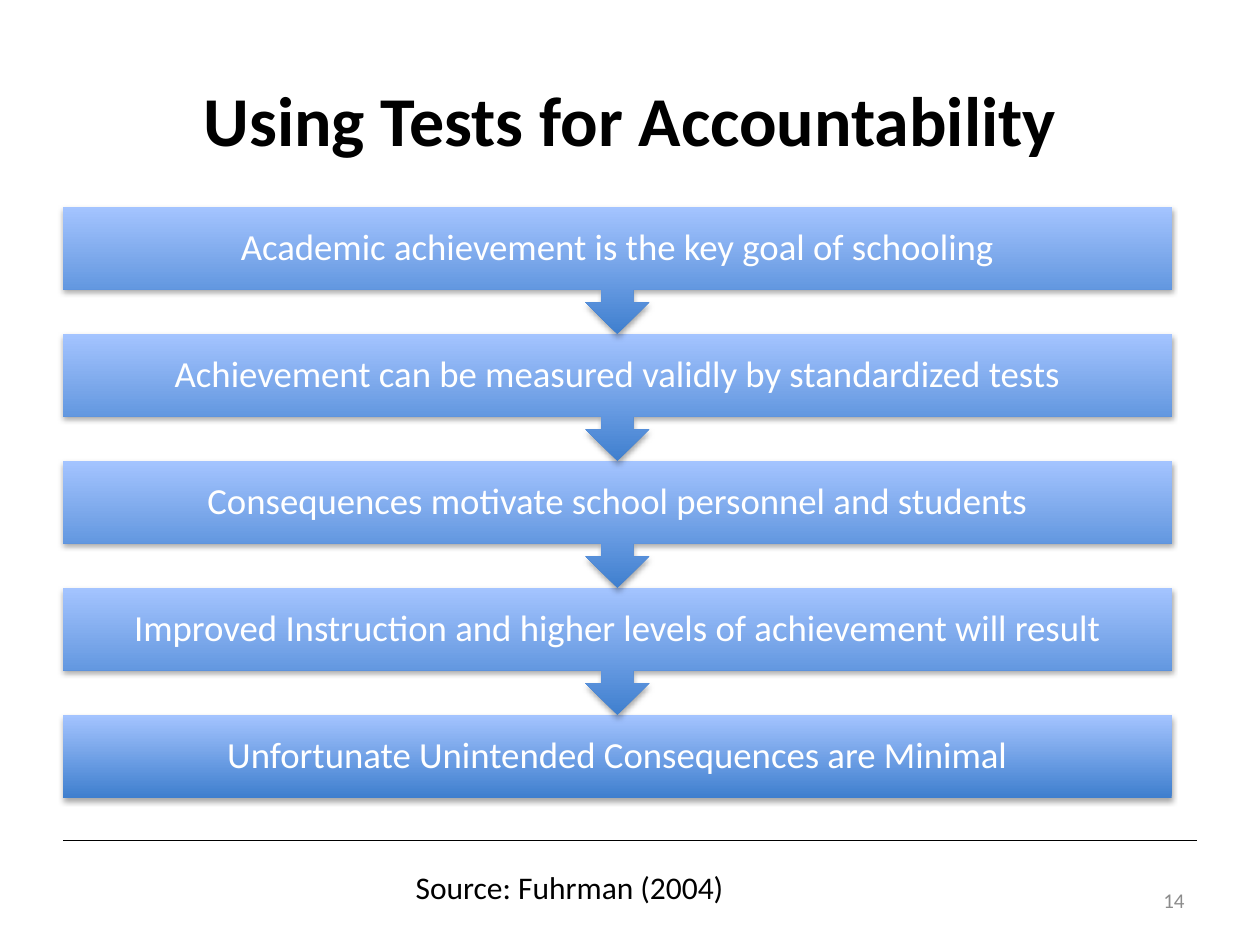
from collections import namedtuple

from lxml import etree
from pptx import Presentation
from pptx.dml.color import RGBColor
from pptx.enum.shapes import MSO_CONNECTOR, MSO_SHAPE
from pptx.enum.text import MSO_ANCHOR, PP_ALIGN
from pptx.oxml.ns import qn
from pptx.util import Inches, Pt

RECTANGLE, CALLOUT = MSO_SHAPE.RECTANGLE, MSO_SHAPE.DOWN_ARROW_CALLOUT
STRAIGHT = MSO_CONNECTOR.STRAIGHT
TOP, MIDDLE = MSO_ANCHOR.TOP, MSO_ANCHOR.MIDDLE
LEFT, CENTER, RIGHT = PP_ALIGN.LEFT, PP_ALIGN.CENTER, PP_ALIGN.RIGHT

WIDTH, HEIGHT = Inches(10), Inches(7.5)
FONT = "Calibri"
COLORS = {
    "ink": "000000",
    "page_number": "8C8C8C",
    "step_text": "FFFFFF",
    "step_bottom": "3F7FCE",
    "step_top": "A4C4FF",
}
BODY_SHARE = 0.14      # height of one step's bar within the chain
CALLOUT_BODY = 0.65    # part of a callout that is bar, the rest is arrow

STEPS = [
    "Academic achievement is the key goal of schooling",
    "Achievement can be measured validly by standardized tests",
    "Consequences motivate school personnel and students",
    "Improved Instruction and higher levels of achievement will result",
    "Unfortunate Unintended Consequences are Minimal",
]

Box = namedtuple("Box", "left top width height")


def slide_box(left, top, width, height):
    """Turn shares of the slide's size into a box of lengths."""
    return Box(int(left * WIDTH), int(top * HEIGHT), int(width * WIDTH), int(height * HEIGHT))


def color(name):
    return RGBColor.from_string(COLORS[name])


def write(frame, text, size, ink, align=LEFT, anchor=MIDDLE, bold=False):
    frame.word_wrap = True
    frame.vertical_anchor = anchor
    paragraph = frame.paragraphs[0]
    paragraph.text = text
    paragraph.alignment = align
    font = paragraph.font
    font.name, font.size, font.bold = FONT, Pt(size), bold
    font.color.rgb = color(ink)
    return paragraph


def add_label(slide, box, text, size, ink, **style):
    write(slide.shapes.add_textbox(*box).text_frame, text, size, ink, **style)


def add_soft_shadow(shape):
    effects = etree.SubElement(shape._element.spPr, qn("a:effectLst"))
    shadow = etree.SubElement(
        effects, qn("a:outerShdw"), blurRad=str(Pt(3.1)), dist=str(Pt(1.8)),
        dir=str(90 * 60000), rotWithShape="0")
    black = etree.SubElement(shadow, qn("a:srgbClr"), val=COLORS["ink"])
    etree.SubElement(black, qn("a:alpha"), val="35000")


def add_step(slide, box, text, kind):
    step = slide.shapes.add_shape(kind, *box)
    if kind == CALLOUT:
        step.adjustments[3] = CALLOUT_BODY
    step.fill.gradient()
    step.fill.gradient_angle = 90
    for stop, name in zip(step.fill.gradient_stops, ("step_bottom", "step_top")):
        stop.color.rgb = color(name)
    step.line.fill.background()
    add_soft_shadow(step)
    frame = step.text_frame
    frame.margin_left = frame.margin_right = Inches(0.16)
    frame.margin_top = frame.margin_bottom = Inches(0.16)
    write(frame, text, 21, "step_text", align=CENTER).line_spacing = 0.9


def add_chain(slide, box, steps):
    """Stack the steps at equal pitch, drawn from the last up so arrows lie on top."""
    body = int(box.height * BODY_SHARE)
    last = len(steps) - 1
    pitch = (box.height - body) / last
    for row in range(last, -1, -1):
        kind = RECTANGLE if row == last else CALLOUT
        height = body if row == last else int(body / CALLOUT_BODY)
        place = Box(box.left, int(box.top + row * pitch), box.width, height)
        add_step(slide, place, steps[row], kind)


def add_footer(slide, box):
    rule = slide.shapes.add_connector(
        STRAIGHT, box.left, box.top, box.left + box.width, box.top)
    rule.line.color.rgb = color("ink")
    rule.line.width = Pt(0.5)
    etree.SubElement(rule._element.spPr, qn("a:effectLst"))

    row = int(box.height * 0.59)
    number = Box(box.left + int(box.width * 0.74), box.top + int(box.height * 0.41),
                 int(box.width * 0.26), row)
    add_label(slide, number, "14", 12, "page_number", align=RIGHT)
    source = Box(box.left + int(box.width * 0.3), box.top + int(box.height * 0.26),
                 int(box.width * 0.62), row)
    add_label(slide, source, "Source: Fuhrman (2004)", 18, "ink", anchor=TOP)


def main():
    deck = Presentation()
    deck.slide_width, deck.slide_height = WIDTH, HEIGHT
    slide = deck.slides.add_slide(deck.slide_layouts[6])
    add_label(slide, slide_box(0.05, 0.04, 0.9, 0.17), "Using Tests for Accountability",
              40, "ink", align=CENTER, bold=True)
    add_chain(slide, slide_box(0.05, 0.219, 0.88, 0.625), STEPS)
    add_footer(slide, slide_box(0.05, 0.889, 0.9, 0.09))
    deck.save("out.pptx")


if __name__ == "__main__":
    main()
